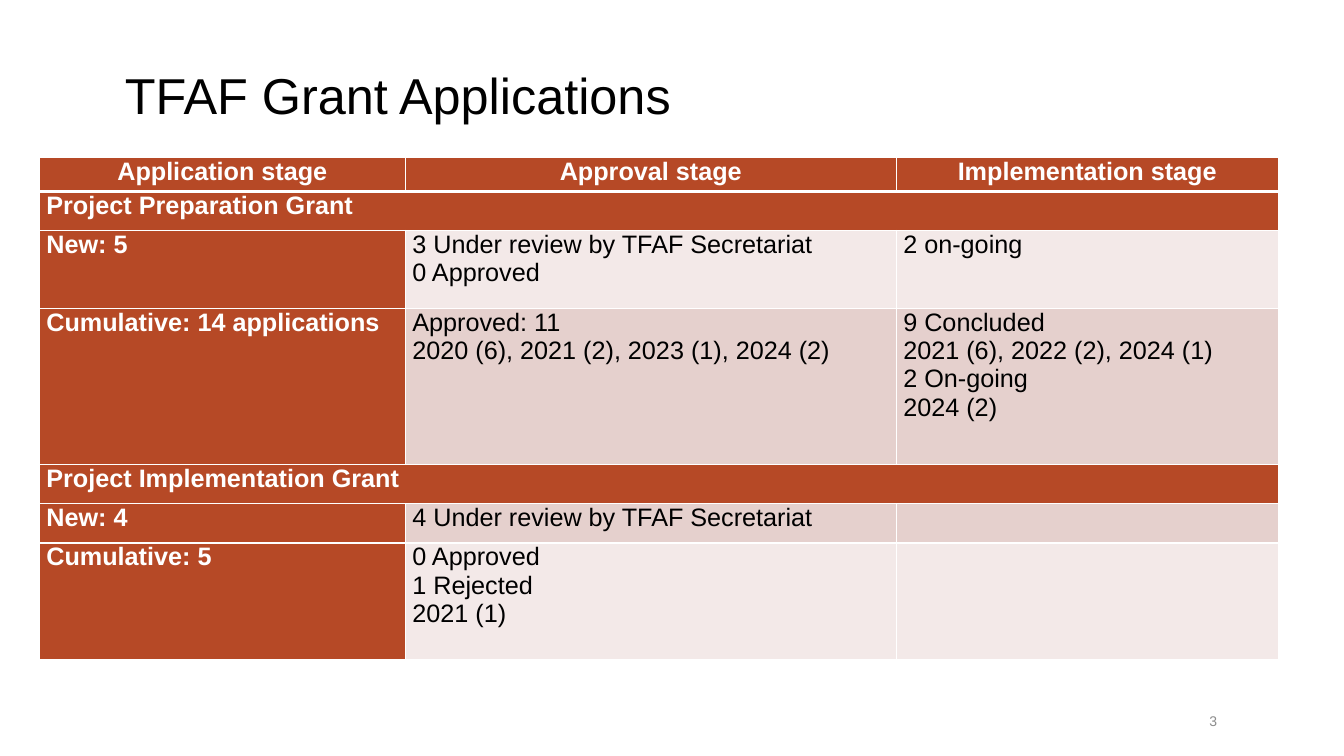
from dataclasses import dataclass

import pptx
import pptx.dml.color
import pptx.enum.text
import pptx.oxml
import pptx.oxml.ns
import pptx.slide
import pptx.table
import pptx.text.text
import pptx.util

RGBColor = pptx.dml.color.RGBColor
Align = pptx.enum.text.PP_ALIGN

BLACK = RGBColor(0x00, 0x00, 0x00)
WHITE = RGBColor(0xFF, 0xFF, 0xFF)
GREY = RGBColor(0x8C, 0x8C, 0x8C)
RUST = RGBColor(0xB6, 0x49, 0x26)
PALE = RGBColor(0xF3, 0xE9, 0xE8)
ROSE = RGBColor(0xE5, 0xD0, 0xCD)

FONT = "Arial"
SLIDE_WIDTH = pptx.util.Inches(13.33)
SLIDE_HEIGHT = pptx.util.Inches(7.5)


def across(percent: float) -> int:
    return round(SLIDE_WIDTH * percent / 100)


def down(percent: float) -> int:
    return round(SLIDE_HEIGHT * percent / 100)


@dataclass(frozen=True)
class Label:
    """A one-line text box, placed in percent of the slide."""
    text: str
    left: float
    top: float
    width: float
    height: float
    size: int
    color: RGBColor
    align: Align = Align.LEFT
    line_spacing: float = 1.0


@dataclass(frozen=True)
class StageRow:
    """A table row; units is its height in body rows."""
    texts: tuple[str, ...]
    units: int
    fill: RGBColor = RUST


LABELS = [
    Label("TFAF Grant Applications", 8.55, 5.33, 67.44, 15.33, 36, BLACK, line_spacing=0.9),
    Label("3", 82.8, 92.67, 8.5, 5.33, 10, GREY, Align.RIGHT),
]

# Table grid, in percent of the slide
TABLE_LEFT, TABLE_TOP = 2.93, 20.8
COLUMN_WIDTHS = (27.23, 36.53, 28.43)
HEADING_HEIGHT, BODY_HEIGHT = 4.53, 62
HEADINGS = ("Application stage", "Approval stage", "Implementation stage")

# A row with a single text spans all columns
BODY_ROWS = [
    StageRow(("Project Preparation Grant",), 1),
    StageRow(("New: 5", "3 Under review by TFAF Secretariat\n0 Approved", "2 on-going"), 2, PALE),
    StageRow(("Cumulative: 14 applications",
              "Approved: 11\n2020 (6), 2021 (2), 2023 (1), 2024 (2)",
              "9 Concluded\n2021 (6), 2022 (2), 2024 (1)\n2 On-going\n2024 (2)"), 4, ROSE),
    StageRow(("Project Implementation Grant",), 1),
    StageRow(("New: 4", "4 Under review by TFAF Secretariat", ""), 1, ROSE),
    StageRow(("Cumulative: 5", "0 Approved\n1 Rejected\n2021 (1)", ""), 3, PALE),
]


def format_text(frame: pptx.text.text.TextFrame, size: int, color: RGBColor,
                bold: bool = False, align: Align = Align.LEFT) -> None:
    for paragraph in frame.paragraphs:
        paragraph.alignment = align
        paragraph.font.size = pptx.util.Pt(size)
        for run in paragraph.runs:
            run.font.name = FONT
            run.font.size = pptx.util.Pt(size)
            run.font.bold = bold
            run.font.color.rgb = color


def add_label(slide: pptx.slide.Slide, label: Label) -> None:
    box = slide.shapes.add_textbox(across(label.left), down(label.top),
                                   across(label.width), down(label.height))
    frame = box.text_frame
    frame.word_wrap = True
    frame.vertical_anchor = pptx.enum.text.MSO_ANCHOR.MIDDLE
    frame.text = label.text
    frame.paragraphs[0].line_spacing = label.line_spacing
    format_text(frame, label.size, label.color, align=label.align)


def set_borders(cell: pptx.table._Cell, top: int, bottom: int) -> None:
    properties = cell._tc.get_or_add_tcPr()
    sides = (("lnL", 1), ("lnR", 1), ("lnT", top), ("lnB", bottom))
    for position, (side, points) in enumerate(sides):
        properties.insert(position, pptx.oxml.parse_xml(
            f'<a:{side} {pptx.oxml.ns.nsdecls("a")} w="{pptx.util.Pt(points)}">'
            f'<a:solidFill><a:srgbClr val="{WHITE}"/></a:solidFill></a:{side}>'))


def fill_cell(cell: pptx.table._Cell, text: str, fill: RGBColor, heading: bool) -> None:
    cell.margin_left = cell.margin_right = pptx.util.Inches(0.07)
    cell.margin_top = cell.margin_bottom = 0
    cell.fill.solid()
    cell.fill.fore_color.rgb = fill
    cell.text_frame.text = text
    strong = fill == RUST
    format_text(cell.text_frame, 18, WHITE if strong else BLACK, strong,
                Align.CENTER if heading else Align.LEFT)


def add_stage_table(slide: pptx.slide.Slide) -> None:
    rows = [StageRow(HEADINGS, 0), *BODY_ROWS]
    unit = BODY_HEIGHT / sum(row.units for row in BODY_ROWS)
    frame = slide.shapes.add_table(
        len(rows), len(COLUMN_WIDTHS), across(TABLE_LEFT), down(TABLE_TOP),
        across(sum(COLUMN_WIDTHS)), down(HEADING_HEIGHT + BODY_HEIGHT))
    table = frame.table
    for column, width in zip(table.columns, COLUMN_WIDTHS):
        column.width = across(width)

    for index, row in enumerate(rows):
        heading = index == 0
        table.rows[index].height = down(HEADING_HEIGHT if heading else row.units * unit)
        for column in range(len(COLUMN_WIDTHS)):
            cell = table.cell(index, column)
            text = row.texts[column] if column < len(row.texts) else ""
            fill = RUST if column == 0 else row.fill
            fill_cell(cell, text, fill, heading)
            set_borders(cell, top=3 if index == 1 else 1, bottom=3 if heading else 1)
        if len(row.texts) == 1:
            table.cell(index, 0).merge(table.cell(index, len(COLUMN_WIDTHS) - 1))


def main() -> None:
    presentation = pptx.Presentation()
    presentation.slide_width = SLIDE_WIDTH
    presentation.slide_height = SLIDE_HEIGHT
    slide = presentation.slides.add_slide(presentation.slide_layouts[6])

    # Title and slide number
    for label in LABELS:
        add_label(slide, label)

    # Grant applications by stage
    add_stage_table(slide)
    presentation.save("out.pptx")


if __name__ == "__main__":
    main()
